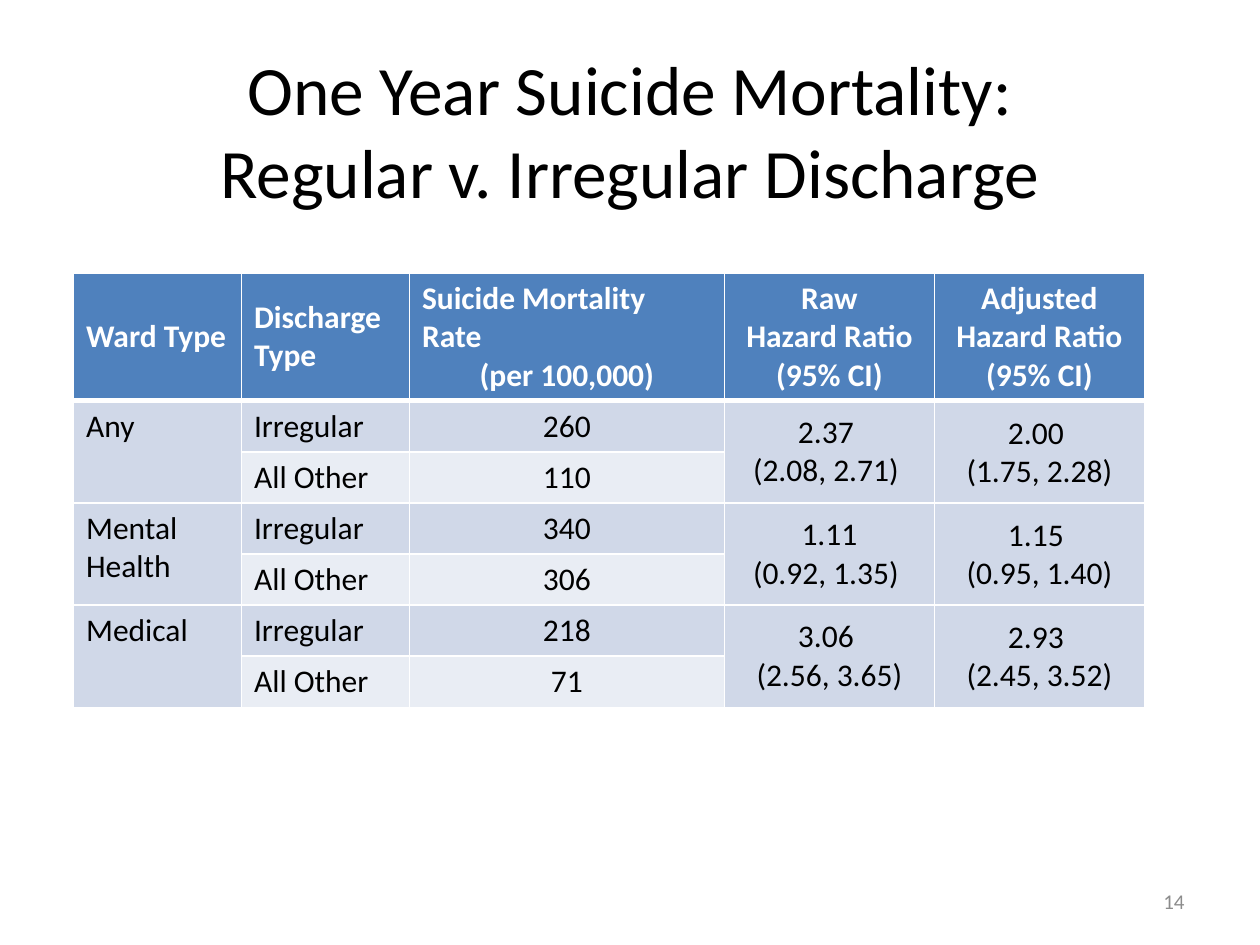
from lxml.etree import SubElement
from pptx import Presentation
from pptx.dml.color import RGBColor
from pptx.enum.text import MSO_ANCHOR, PP_ALIGN
from pptx.oxml.ns import qn
from pptx.util import Pt

COLORS = {
    "black": "000000",
    "white": "FFFFFF",
    "grey": "8C8C8C",
    "header": "4F81BD",
    "band": "D0D8E8",
    "light_band": "E9EDF4",
}
COLUMN_WIDTHS = [96, 96, 180, 120, 120]
HEADER_HEIGHT, ROW_HEIGHT = 73, 29.2
HEADERS = [
    ["Ward Type"],
    ["Discharge Type"],
    ["Suicide Mortality Rate", "(per 100,000)"],
    ["Raw", "Hazard Ratio (95% CI)"],
    ["Adjusted", "Hazard Ratio", "(95% CI)"],
]
# Ward, irregular rate, all other rate, raw ratio, adjusted ratio
WARDS = [
    ("Any", "260", "110", ["2.37 ", "(2.08, 2.71) "], ["2.00 ", "(1.75, 2.28)"]),
    ("Mental Health", "340", "306", ["1.11", "(0.92, 1.35) "], ["1.15 ", "(0.95, 1.40)"]),
    ("Medical", "218", "71", ["3.06 ", "(2.56, 3.65)"], ["2.93 ", "(2.45, 3.52)"]),
]
LEFT, CENTER, RIGHT = PP_ALIGN.LEFT, PP_ALIGN.CENTER, PP_ALIGN.RIGHT


def write_text(frame, lines, size=18, color="black", bold=False, alignments=(LEFT,)):
    """Write one paragraph per line; the last alignment serves all further lines."""
    frame.word_wrap = True
    frame.text = "\n".join(lines)
    for index, paragraph in enumerate(frame.paragraphs):
        paragraph.alignment = alignments[min(index, len(alignments) - 1)]
        for run in paragraph.runs:
            run.font.name = "Calibri"
            run.font.size = Pt(size)
            run.font.bold = bold
            run.font.color.rgb = RGBColor.from_string(COLORS[color])


def set_borders(cell, top=1, bottom=1):
    properties = cell._tc.get_or_add_tcPr()
    widths = {"a:lnL": 1, "a:lnR": 1, "a:lnT": top, "a:lnB": bottom}
    for tag, width in widths.items():
        line = SubElement(properties, qn(tag), w=str(Pt(width)))
        fill = SubElement(line, qn("a:solidFill"))
        SubElement(fill, qn("a:srgbClr"), val=COLORS["white"])


class SlideBuilder:
    def __init__(self, slide):
        self.slide = slide

    def text_box(self, left, top, width, height, lines, **text_format):
        box = self.slide.shapes.add_textbox(Pt(left), Pt(top), Pt(width), Pt(height))
        box.text_frame.vertical_anchor = MSO_ANCHOR.MIDDLE
        write_text(box.text_frame, lines, **text_format)

    def table(self, left, top, widths, heights):
        shape = self.slide.shapes.add_table(
            len(heights), len(widths), Pt(left), Pt(top), Pt(sum(widths)), Pt(sum(heights)))
        table = shape.table
        table.horz_banding = False
        table.first_row = False
        for column, width in zip(table.columns, widths):
            column.width = Pt(width)
        for row, height in zip(table.rows, heights):
            row.height = Pt(height)
        return table

    def cell(self, cell, lines, fill="band", middle=False, **text_format):
        cell.fill.solid()
        cell.fill.fore_color.rgb = RGBColor.from_string(COLORS[fill])
        cell.vertical_anchor = MSO_ANCHOR.MIDDLE if middle else MSO_ANCHOR.TOP
        write_text(cell.text_frame, lines, **text_format)


def fill_mortality_table(builder, table):
    for column, lines in enumerate(HEADERS):
        first = CENTER if column > 2 else LEFT
        builder.cell(table.cell(0, column), lines, fill="header", middle=True,
                     color="white", bold=True, alignments=(first, CENTER))

    for index, (ward, irregular, other, raw, adjusted) in enumerate(WARDS):
        row = 1 + 2 * index
        for column in (0, 3, 4):
            table.cell(row, column).merge(table.cell(row + 1, column))
        builder.cell(table.cell(row, 0), [ward])
        discharges = [("Irregular", irregular, "band"), ("All Other", other, "light_band")]
        for offset, (discharge, rate, fill) in enumerate(discharges):
            builder.cell(table.cell(row + offset, 1), [discharge], fill=fill)
            builder.cell(table.cell(row + offset, 2), [rate], fill=fill, alignments=(CENTER,))
        for column, ratio in ((3, raw), (4, adjusted)):
            builder.cell(table.cell(row, column), ratio, middle=True, alignments=(CENTER,))
        ratio_cell = table.cell(row, 4)
        ratio_cell.margin_left = ratio_cell.margin_right = ratio_cell.margin_top = Pt(0.75)
        ratio_cell.margin_bottom = Pt(0)

    for row in range(len(table.rows)):
        for column in range(len(table.columns)):
            cell = table.cell(row, column)
            # The fill must follow the borders in the cell properties.
            properties = cell._tc.get_or_add_tcPr()
            fills = list(properties)
            set_borders(cell, top=3 if row == 1 else 1, bottom=3 if row == 0 else 1)
            for fill in fills:
                properties.append(fill)


def main():
    presentation = Presentation()
    presentation.slide_width, presentation.slide_height = Pt(720), Pt(540)
    builder = SlideBuilder(presentation.slides.add_slide(presentation.slide_layouts[6]))
    builder.text_box(36, 21.6, 648, 104.4,
                     ["One Year Suicide Mortality:\vRegular v. Irregular Discharge"],
                     size=39.6, alignments=(CENTER,))
    builder.text_box(516, 500.5, 168, 28.75, ["14"], size=12, color="grey",
                     alignments=(RIGHT,))
    heights = [HEADER_HEIGHT] + [ROW_HEIGHT] * (2 * len(WARDS))
    fill_mortality_table(builder, builder.table(42, 156, COLUMN_WIDTHS, heights))
    presentation.save("out.pptx")


if __name__ == "__main__":
    main()
